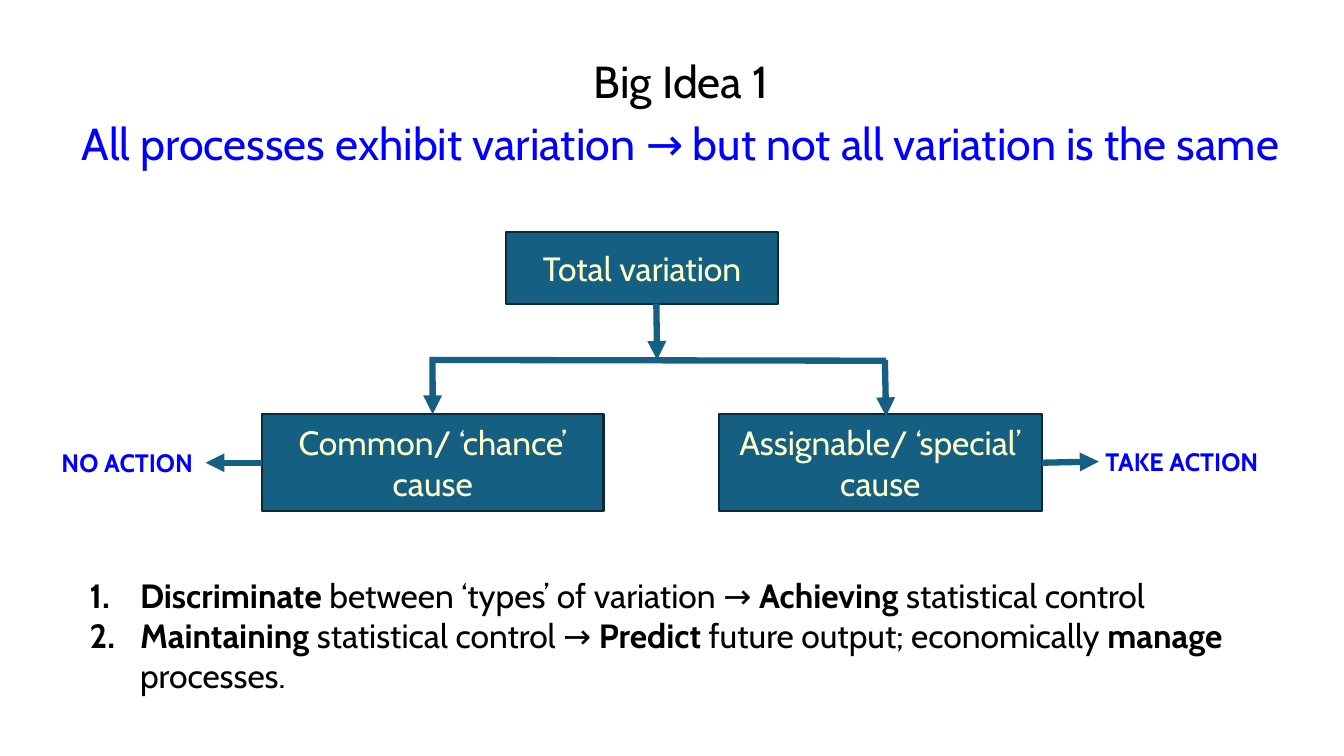
from lxml.etree import SubElement
from pptx import Presentation
from pptx.dml.color import RGBColor
from pptx.enum.shapes import MSO_CONNECTOR as Connector, MSO_SHAPE as Shape
from pptx.enum.text import MSO_ANCHOR as Anchor, MSO_AUTO_SIZE as AutoSize, PP_ALIGN as Align
from pptx.oxml.ns import qn
from pptx.util import Cm, Pt

FONT = "Cabin"
BLACK = RGBColor(0x00, 0x00, 0x00)
BLUE = RGBColor(0x00, 0x00, 0xFF)
TEAL = RGBColor(0x15, 0x60, 0x82)
DARK_TEAL = RGBColor(0x09, 0x2A, 0x39)
CREAM = RGBColor(0xFF, 0xFF, 0xCC)

LEFT, TOP, RIGHT = 1, 0, 3


def style_run(r, size, color, bold=False):
    r.font.name = FONT
    r.font.size = Pt(size)
    r.font.color.rgb = color
    r.font.bold = bold


def add_text_box(s, left, top, width, height, wrap=True):
    sp = s.shapes.add_textbox(Cm(left), Cm(top), Cm(width), Cm(height))
    tf = sp.text_frame
    tf.word_wrap = wrap
    return tf


def add_title(s, lines):
    tf = add_text_box(s, 1.14, 1.37, 32.05, 12.09)
    tf.text = "\n".join(text for text, color in lines)
    for p, (text, color) in zip(tf.paragraphs, lines):
        p.alignment = Align.CENTER
        p.line_spacing = 0.9
        p.space_before = Pt(10)
        style_run(p.runs[0], 32, color)


def add_box(s, text, left, top, width, height):
    sp = s.shapes.add_shape(Shape.RECTANGLE, Cm(left), Cm(top), Cm(width), Cm(height))
    sp.shadow.inherit = False
    sp.fill.solid()
    sp.fill.fore_color.rgb = TEAL
    sp.line.color.rgb = DARK_TEAL
    sp.line.width = Pt(1.5)
    tf = sp.text_frame
    tf.word_wrap = True
    tf.vertical_anchor = Anchor.MIDDLE
    tf.text = text
    p = tf.paragraphs[0]
    p.alignment = Align.CENTER
    style_run(p.runs[0], 24, CREAM)
    return sp


def add_line(s, x1, y1, x2, y2, arrow=True):
    line = s.shapes.add_connector(Connector.STRAIGHT, Cm(x1), Cm(y1), Cm(x2), Cm(y2))
    line.line.color.rgb = TEAL
    line.line.width = Pt(4.5)
    if arrow:
        SubElement(line.line._get_or_add_ln(), qn("a:tailEnd"), type="triangle")
    SubElement(line._element.spPr, qn("a:effectLst"))
    return line


def add_action(s, text, left, top, width):
    tf = add_text_box(s, left, top, width, 1.02, wrap=False)
    tf.auto_size = AutoSize.SHAPE_TO_FIT_TEXT
    tf.text = text
    style_run(tf.paragraphs[0].runs[0], 18, BLUE, True)


def add_numbered_list(s, items):
    tf = add_text_box(s, 2.01, 14.35, 29.97, 3.33)
    tf.auto_size = AutoSize.SHAPE_TO_FIT_TEXT
    for i, item in enumerate(items):
        p = tf.add_paragraph() if i else tf.paragraphs[0]
        pPr = p._p.get_or_add_pPr()
        pPr.set("marL", str(Cm(1.27)))
        pPr.set("indent", str(-Cm(1.27)))
        SubElement(pPr, qn("a:buFont"), typeface="+mj-lt")
        SubElement(pPr, qn("a:buAutoNum"), type="arabicPeriod")
        for j, text in enumerate(item):
            r = p.add_run()
            r.text = text
            style_run(r, 24, BLACK, bold=j % 2 == 0)


def main():
    prs = Presentation()
    prs.slide_width, prs.slide_height = Cm(33.87), Cm(19.05)
    s = prs.slides.add_slide(prs.slide_layouts[6])

    add_title(s, [
        ("Big Idea 1", BLACK),
        ("All processes exhibit variation → but not all variation is the same", BLUE),
    ])

    add_box(s, "Total variation", 12.75, 5.84, 6.86, 1.83)
    common = add_box(s, "Common/ ‘chance’ cause", 6.6, 10.44, 8.61, 2.44)
    assignable = add_box(s, "Assignable/ ‘special’ cause", 18.11, 10.44, 8.15, 2.44)

    add_line(s, 10.9, 8.99, 10.91, 10.44).end_connect(common, TOP)
    add_line(s, 22.3, 9.07, 22.33, 10.49)
    add_line(s, 10.9, 9.07, 22.33, 9.09, arrow=False)
    add_line(s, 16.54, 7.65, 16.56, 9.07)
    add_line(s, 26.26, 11.66, 27.69, 11.63).begin_connect(assignable, RIGHT)
    add_line(s, 6.6, 11.66, 5.18, 11.66).begin_connect(common, LEFT)

    add_action(s, "NO ACTION", 1.3, 11.15, 3.86)
    add_action(s, "TAKE ACTION", 27.61, 11.13, 4.37)

    add_numbered_list(s, [
        ("Discriminate", " between ‘types’ of variation → ", "Achieving ", "statistical control"),
        ("Maintaining", " statistical control → ", "Predict",
         " future output; economically ", "manage", " processes."),
    ])

    prs.save("out.pptx")


if __name__ == "__main__":
    main()
